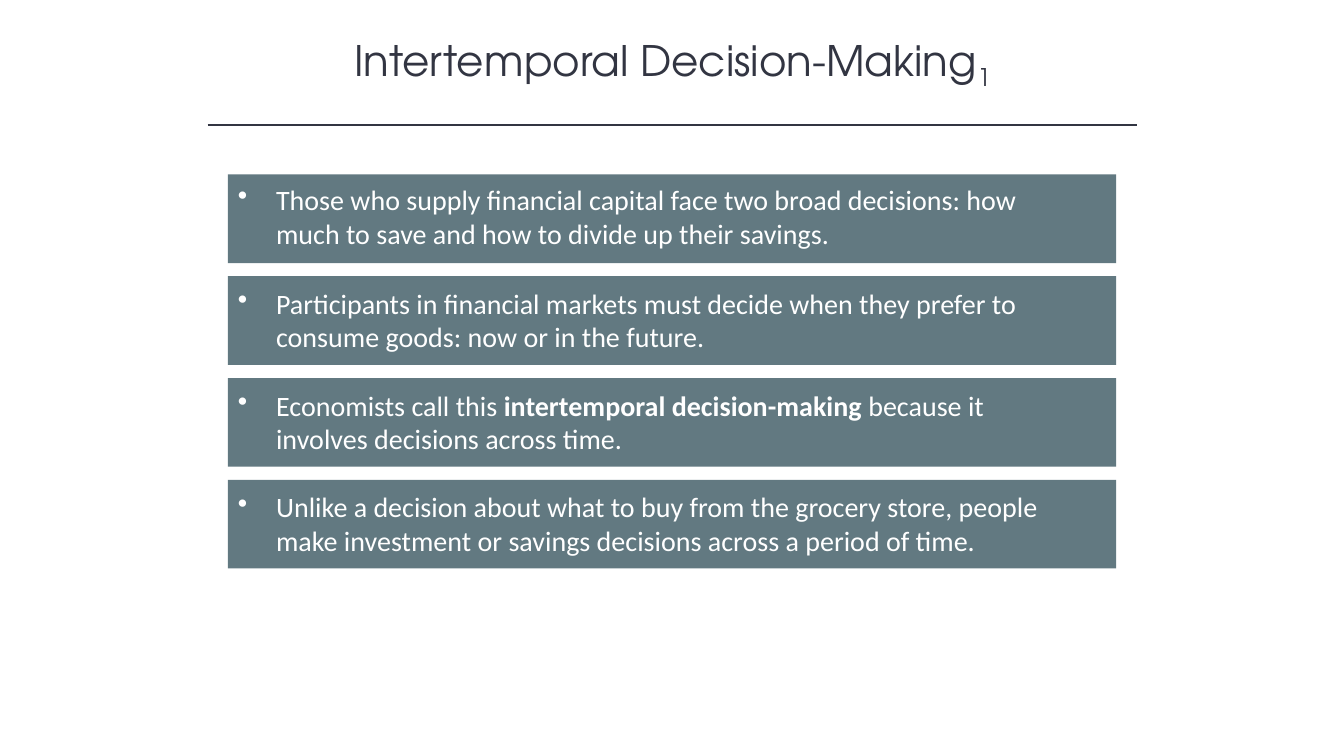
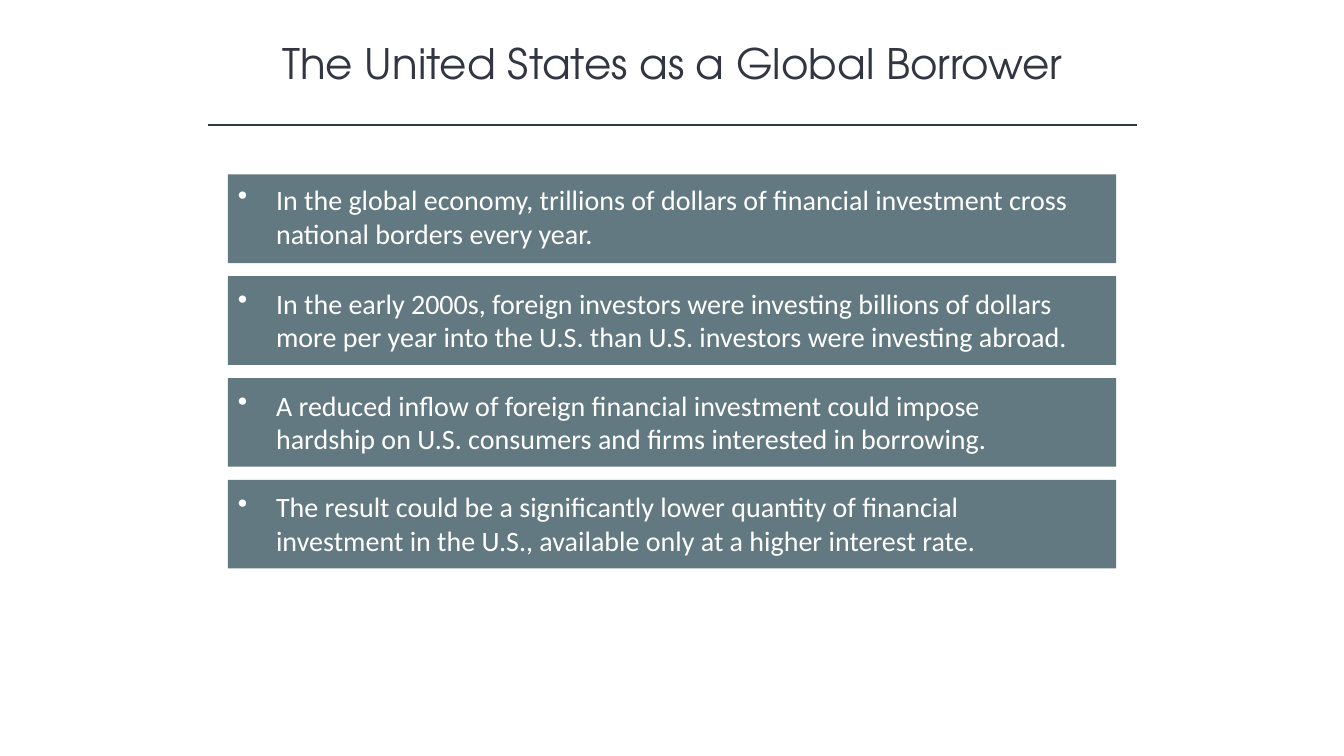
"""Build two slides of stacked bullet cards under a ruled title."""

import dataclasses
import typing

import lxml.etree
import pptx
import pptx.dml.color
import pptx.enum.shapes
import pptx.enum.text
import pptx.oxml.ns
import pptx.util

Inches = pptx.util.Inches
Pt = pptx.util.Pt
ALIGN = pptx.enum.text.PP_ALIGN
ANCHOR = pptx.enum.text.MSO_ANCHOR
FIT = pptx.enum.text.MSO_AUTO_SIZE
qn = pptx.oxml.ns.qn

INK, SLATE, WHITE = "323542", "627981", "FFFFFF"
TITLE = {"name": "TeX Gyre Adventor", "size": Pt(30), "bold": False}
BODY = {"name": "Calibri", "size": Pt(20)}
HEAD = {"left": Inches(1.67), "top": Inches(0.32),
        "width": Inches(10), "height": Inches(0.61)}
FRAME = {"word_wrap": True, "vertical_anchor": ANCHOR.TOP,
         "auto_size": FIT.NONE, "margin_left": Inches(0.1),
         "margin_right": Inches(0.37), "margin_bottom": Inches(0.05)}
LEFT, TOP, WIDTH, HEIGHT, STEP = 2.26, 1.73, 8.81, 0.88, 1.01
INDENT = 0.38


@dataclasses.dataclass(frozen=True)
class Span:
    """A stretch of text with its own weight."""
    text: str
    bold: bool = False


@dataclasses.dataclass(frozen=True)
class Page:
    """The title, its subscript and the cards of one slide."""
    title: str
    cards: tuple[tuple[Span, ...], ...]
    sub: str = ""


PAGES = (
    Page("Intertemporal Decision-Making", (
        (Span("Those who supply financial capital face two broad decisions: "
              "how much to save and how to divide up their savings."),),
        (Span("Participants in financial markets must decide when they "
              "prefer to consume goods: now or in the future."),),
        (Span("Economists call this "),
         Span("intertemporal decision-making", True),
         Span(" because it involves decisions across time.")),
        (Span("Unlike a decision about what to buy from the grocery store, "
              "people make investment or savings decisions across a period "
              "of time."),),
    ), "1"),
    Page("The United States as a Global Borrower", (
        (Span("In the global economy, trillions of dollars of financial "
              "investment cross national borders every year."),),
        (Span("In the early 2000s, foreign investors were investing billions "
              "of dollars more per year into the U.S. than U.S. investors "
              "were investing abroad."),),
        (Span("A reduced inflow of foreign financial investment could impose "
              "hardship on U.S. consumers and firms interested in "
              "borrowing."),),
        (Span("The result could be a significantly lower quantity of "
              "financial investment in the U.S., available only at a higher "
              "interest rate."),),
    )),
)


def tint(color: str) -> pptx.dml.color.RGBColor:
    """Turn a hex string into a colour."""
    return pptx.dml.color.RGBColor.from_string(color)


def apply(target: typing.Any, form: dict[str, typing.Any]) -> None:
    """Set every attribute that the format names."""
    for name, value in form.items():
        setattr(target, name, value)


def style(font: typing.Any, form: dict[str, typing.Any], color: str) -> None:
    """Format a font and give it a colour."""
    apply(font, form)
    font.color.rgb = tint(color)


def bullet(para: typing.Any) -> None:
    """Give a paragraph a hanging bullet."""
    props = para._p.get_or_add_pPr()
    props.set("marL", str(Inches(INDENT)))
    props.set("indent", str(-Inches(INDENT)))
    lxml.etree.SubElement(props, qn("a:buChar")).set("char", "•")


def draw_title(slide: typing.Any, page: Page) -> None:
    """Fill the title and its subscript."""
    title = slide.shapes.title
    apply(title, HEAD)
    apply(title.text_frame, {"word_wrap": True,
                             "auto_size": FIT.SHAPE_TO_FIT_TEXT})
    para = title.text_frame.paragraphs[0]
    para.alignment = ALIGN.CENTER
    for text, base in ((page.title, 0), (page.sub, -25000)):
        if text:
            run = para.add_run()
            run.text = text
            style(run.font, TITLE, INK)
            if base:
                run._r.get_or_add_rPr().set("baseline", str(base))


def draw_rule(slide: typing.Any) -> None:
    """Draw the line below the title."""
    rule = slide.shapes.add_connector(
        pptx.enum.shapes.MSO_CONNECTOR.STRAIGHT,
        Inches(2.06), Inches(1.24), Inches(11.28), Inches(1.24))
    rule.line.color.rgb = tint(INK)
    rule.line.width = Pt(1)
    lxml.etree.SubElement(rule._element.spPr, qn("a:effectLst"))


def draw_card(slide: typing.Any, row: int, spans: tuple[Span, ...]) -> None:
    """Draw one filled card with its bullet text."""
    card = slide.shapes.add_shape(
        pptx.enum.shapes.MSO_SHAPE.RECTANGLE, Inches(LEFT),
        Inches(TOP + row * STEP), Inches(WIDTH), Inches(HEIGHT))
    card.shadow.inherit = False
    card.fill.solid()
    card.fill.fore_color.rgb = tint(SLATE)
    card.line.fill.background()
    frame = card.text_frame
    apply(frame, FRAME)
    frame.margin_top = Inches(0.1 if row else 0.08)
    para = frame.paragraphs[0]
    para.alignment = ALIGN.LEFT
    bullet(para)
    style(para.font, BODY, WHITE)
    for span in spans:
        run = para.add_run()
        run.text = span.text
        style(run.font, BODY | {"bold": span.bold}, WHITE)


def main() -> None:
    """Build and save the deck."""
    deck = pptx.Presentation()
    apply(deck, {"slide_width": Inches(13.33), "slide_height": Inches(7.5)})
    for page in PAGES:
        slide = deck.slides.add_slide(deck.slide_layouts[5])
        draw_title(slide, page)
        draw_rule(slide)
        for row, spans in enumerate(page.cards):
            draw_card(slide, row, spans)
    deck.save("out.pptx")


if __name__ == "__main__":
    main()
